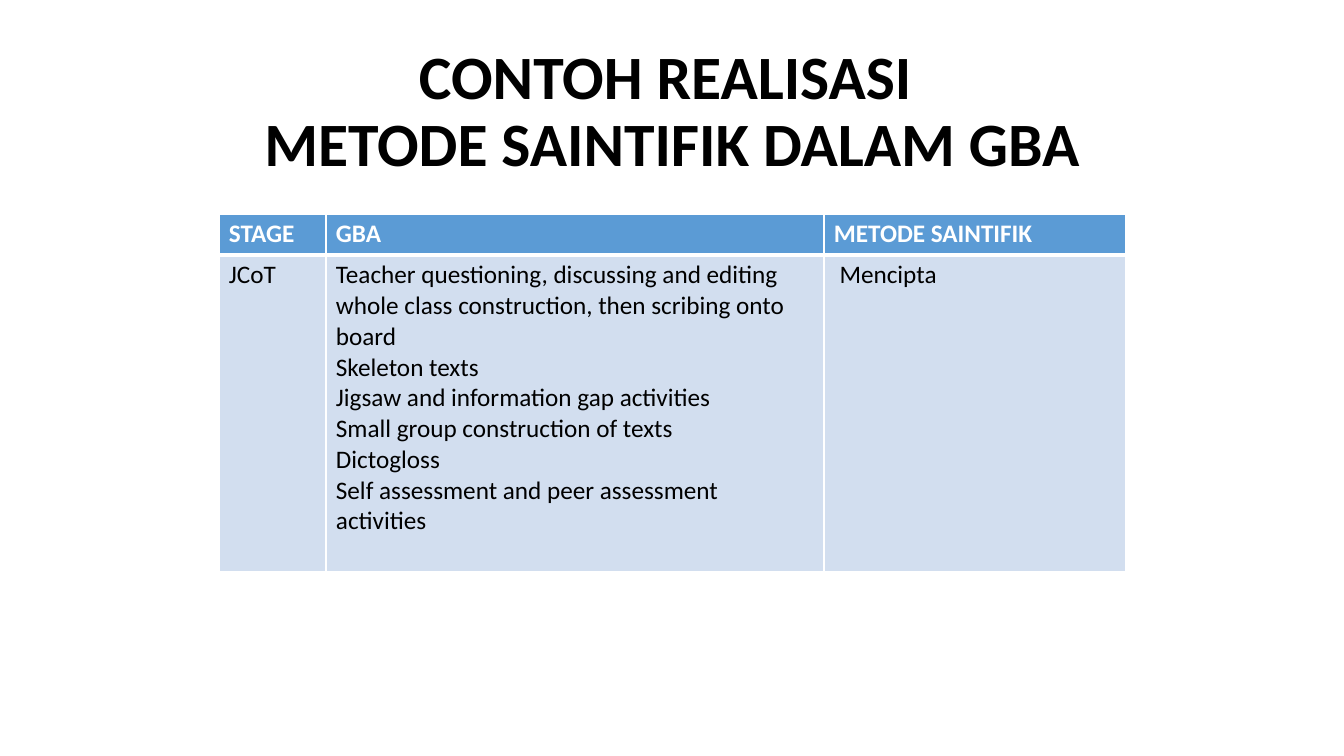
"""Build a title slide with one table of teaching stages."""
from lxml.etree import SubElement as Sub
from pptx import Presentation
from pptx.dml.color import RGBColor
from pptx.enum.text import MSO_ANCHOR as Anchor, PP_ALIGN as Align
from pptx.oxml.ns import qn
from pptx.util import Emu, Pt

SCALE = 914400 / 100.8
FONT = "Calibri"
WHITE, BLACK, BLUE, PALE = "FFFFFF", "000000", "5B9BD5", "D2DEEF"

COLS = [107, 498, 302]
ROWS = [41, 317]
CELLS = [
    ["STAGE", "GBA", "METODE SAINTIFIK"],
    [
        "JCoT",
        "Teacher questioning, discussing and editing whole class "
        "construction, then scribing onto board\n"
        "Skeleton texts\n"
        "Jigsaw and information gap activities\n"
        "Small group construction of texts\n"
        "Dictogloss\n"
        "Self assessment and peer assessment activities",
        " Mencipta",
    ],
]


def px(size):
    return Emu(round(size * SCALE))


def color(code):
    return RGBColor.from_string(code)


def style(para, size, code, bold):
    font = para.font
    font.name, font.size, font.bold = FONT, Pt(size), bold
    font.color.rgb = color(code)


def add_title(slide, text, left, top, width, height):
    title = slide.shapes.title
    title.left, title.top = px(left), px(top)
    title.width, title.height = px(width), px(height)
    frame = title.text_frame
    frame.vertical_anchor = Anchor.MIDDLE
    frame.word_wrap = True
    para = frame.paragraphs[0]
    para.text = text
    para.alignment = Align.CENTER
    para.line_spacing = 0.9
    style(para, 44, BLACK, True)


def add_edges(cell, widths):
    props = cell._tc.get_or_add_tcPr()
    for side, width in zip("LRTB", widths):
        line = Sub(props, qn(f"a:ln{side}"), w=str(Pt(width)))
        fill = Sub(line, qn("a:solidFill"))
        Sub(fill, qn("a:srgbClr"), val=WHITE)


def fill_cell(cell, text, head):
    cell.text = text
    cell.margin_left = cell.margin_right = px(10)
    cell.margin_top = cell.margin_bottom = px(5)
    for para in cell.text_frame.paragraphs:
        style(para, 18, WHITE if head else BLACK, head)
    add_edges(cell, (1, 1, 1, 3) if head else (1, 1, 3, 1))
    cell.fill.solid()
    cell.fill.fore_color.rgb = color(BLUE if head else PALE)


def add_grid(slide, left, top):
    frame = slide.shapes.add_table(
        len(ROWS), len(COLS), px(left), px(top), px(sum(COLS)), px(sum(ROWS)))
    table = frame.table
    table.first_row = table.horz_banding = False
    for col, width in zip(table.columns, COLS):
        col.width = px(width)
    for i, (row, height) in enumerate(zip(table.rows, ROWS)):
        row.height = px(height)
        for cell, text in zip(row.cells, CELLS[i]):
            fill_cell(cell, text, i == 0)


def main():
    deck = Presentation()
    deck.slide_width, deck.slide_height = px(1344), px(756)
    slide = deck.slides.add_slide(deck.slide_layouts[5])
    add_title(slide, "CONTOH REALISASI \vMETODE SAINTIFIK DALAM GBA",
              93, 40, 1159, 146)
    add_grid(slide, 219, 214)
    deck.save("out.pptx")


if __name__ == "__main__":
    main()
